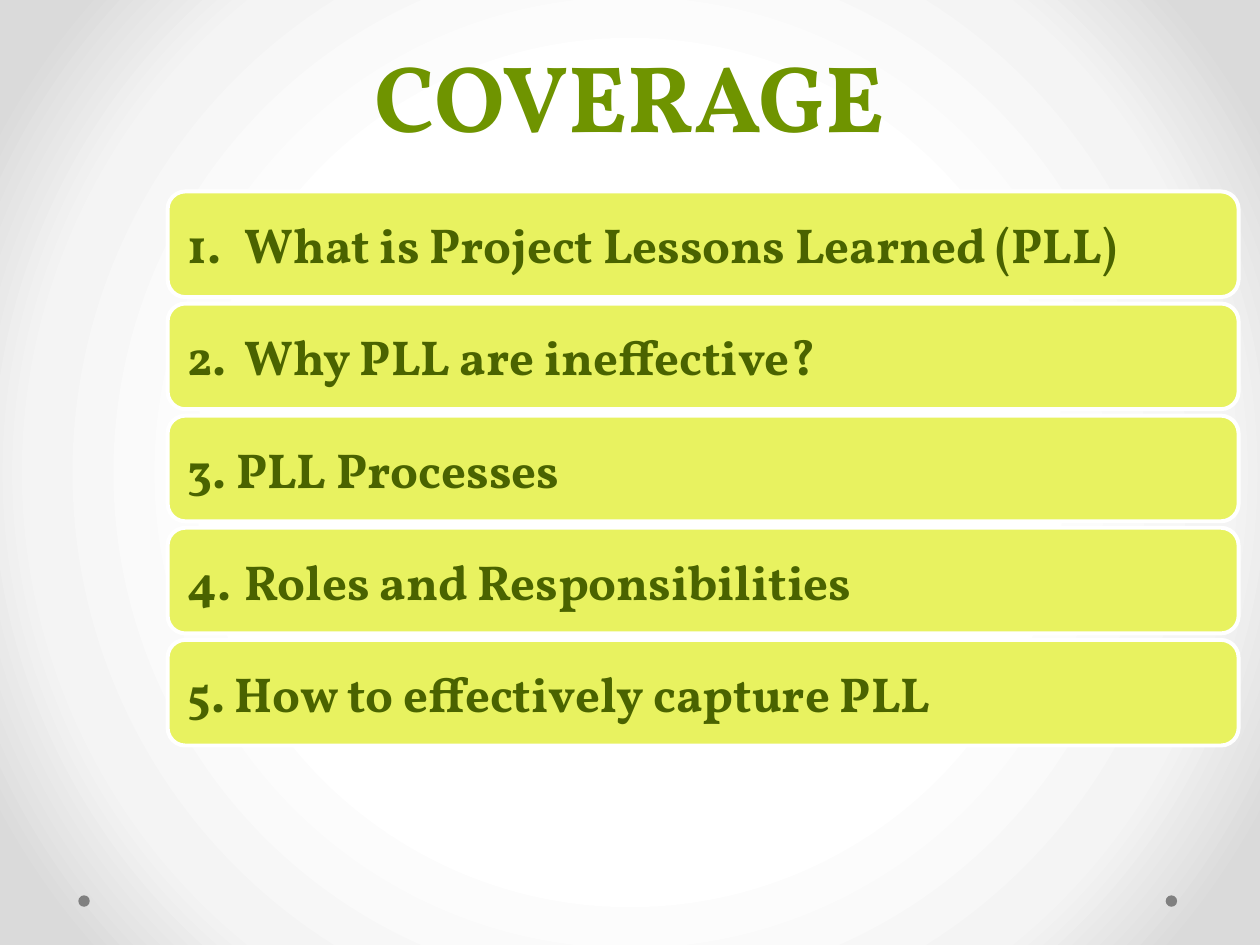
"""Build the coverage slide: a title above five numbered bars."""
from dataclasses import dataclass

import pptx
import pptx.dml.color
import pptx.enum.shapes
import pptx.enum.text
import pptx.oxml
import pptx.oxml.ns
import pptx.util
from pptx.util import Cm, Pt

SHAPE = pptx.enum.shapes.MSO_SHAPE
ALIGN = pptx.enum.text.PP_ALIGN
ANCHOR = pptx.enum.text.MSO_ANCHOR


@dataclass(frozen=True)
class Theme:
    font: str = "Vollkorn"
    title: str = "6F9400"
    ink: str = "4A6300"
    bar: str = "E8F260"
    edge: str = "FFFFFF"
    dot: str = "808080"
    glow: tuple = ((50, "FFFFFF"), (76, "F4F4F4"), (92, "DADADA"))
    big: int = 54
    body: int = 28
    lead: int = 58
    rim: float = 2.25


THEME = Theme()
TOPICS = (
    "1.\tWhat is Project Lessons Learned (PLL)",
    "2.\tWhy PLL are ineffective?",
    "3. PLL Processes",
    "4.\tRoles and Responsibilities",
    "5. How to effectively capture PLL",
)


def rgb(code):
    return pptx.dml.color.RGBColor.from_string(code)


def set_glow(slide):
    stops = "".join(
        f'<a:gs pos="{pos * 1000}"><a:srgbClr val="{code}"/></a:gs>'
        for pos, code in THEME.glow
    )
    spaces = pptx.oxml.ns.nsdecls("p", "a")
    back = pptx.oxml.parse_xml(
        f'<p:bg {spaces}><p:bgPr><a:gradFill rotWithShape="1">'
        f'<a:gsLst>{stops}</a:gsLst><a:path path="circle">'
        '<a:fillToRect l="50000" t="50000" r="50000" b="50000"/></a:path>'
        "</a:gradFill><a:effectLst/></p:bgPr></p:bg>"
    )
    slide.element.cSld.insert(0, back)


def style(para, size, code, align):
    para.alignment = align
    for run in para.runs:
        run.font.name = THEME.font
        run.font.size = Pt(size)
        run.font.bold = True
        run.font.color.rgb = rgb(code)


def add_tab(para, pos):
    spaces = pptx.oxml.ns.nsdecls("a")
    props = para._p.get_or_add_pPr()
    props.append(pptx.oxml.parse_xml(
        f'<a:tabLst {spaces}><a:tab pos="{pos}" algn="l"/></a:tabLst>'
    ))


def add_form(slide, kind, box, code):
    form = slide.shapes.add_shape(kind, *box)
    form.shadow.inherit = False
    form.fill.solid()
    form.fill.fore_color.rgb = rgb(code)
    form.line.fill.background()
    return form


def add_dot(slide, left):
    add_form(slide, SHAPE.OVAL, (left, Cm(18.05), Cm(0.23), Cm(0.23)), THEME.dot)


def add_title(slide, text):
    box = slide.shapes.add_textbox(Cm(1.27), Cm(0), Cm(22.86), Cm(3.18))
    frame = box.text_frame
    frame.word_wrap = True
    frame.vertical_anchor = ANCHOR.BOTTOM
    frame.text = text
    para = frame.paragraphs[0]
    para.line_spacing = Pt(THEME.lead)
    style(para, THEME.big, THEME.title, ALIGN.CENTER)


def add_bar(slide, top, text):
    box = (Cm(3.38), top, Cm(21.59), Cm(2.13))
    bar = add_form(slide, SHAPE.ROUNDED_RECTANGLE, box, THEME.bar)
    bar.line.color.rgb = rgb(THEME.edge)
    bar.line.width = Pt(THEME.rim)
    frame = bar.text_frame
    frame.word_wrap = True
    frame.vertical_anchor = ANCHOR.MIDDLE
    frame.margin_left = frame.margin_right = Cm(0.3)
    frame.margin_top = frame.margin_bottom = Cm(0.3)
    frame.text = text
    para = frame.paragraphs[0]
    add_tab(para, Cm(1.15))
    style(para, THEME.body, THEME.ink, ALIGN.LEFT)


def main():
    deck = pptx.Presentation()
    deck.slide_width, deck.slide_height = Cm(25.4), Cm(19.05)
    slide = deck.slides.add_slide(deck.slide_layouts[6])
    set_glow(slide)
    for left in (Cm(23.5), Cm(1.58)):
        add_dot(slide, left)
    add_title(slide, "COVERAGE")
    for row, text in enumerate(TOPICS):
        add_bar(slide, Cm(3.86 + 2.26 * row), text)
    deck.save("out.pptx")


if __name__ == "__main__":
    main()
